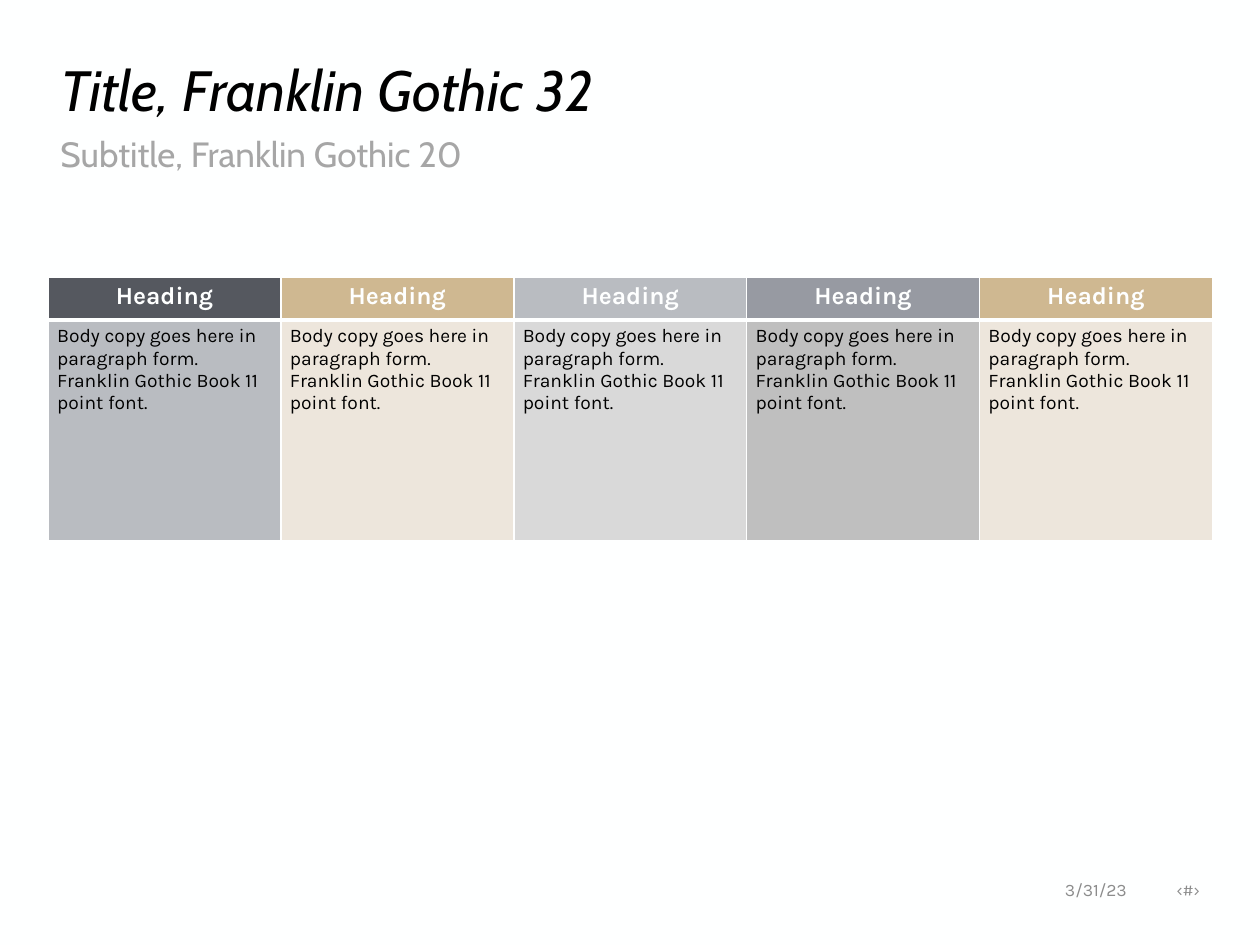
from lxml import etree
from pptx import Presentation
from pptx.dml.color import RGBColor
from pptx.enum.text import MSO_ANCHOR, PP_ALIGN
from pptx.oxml.ns import qn
from pptx.util import Cm, Pt

MID, TOP = MSO_ANCHOR.MIDDLE, MSO_ANCHOR.TOP
LEFT, CENTER = PP_ALIGN.LEFT, PP_ALIGN.CENTER
PAPER, BLACK = "FEFFFF", "000000"
BODY = "Body copy goes here in paragraph form. Franklin Gothic Book 11 point font."
HEADS = ["55585F", "CFB891", "B9BCC1", "979AA2", "CFB891"]
FILLS = ["B9BCC1", "EDE6DC", "D9D9D9", "BFBFBF", "EDE6DC"]


def paint(fmt, code):
    """Fill a format with a solid hex colour."""
    fmt.solid()
    fmt.fore_color.rgb = RGBColor.from_string(code)


def add_run(para, text, face, size, code, bold=False, slant=False):
    """Add one styled run to a paragraph."""
    run = para.add_run()
    run.text = text
    font = run.font
    font.name, font.size = face, Pt(size)
    font.bold, font.italic = bold, slant
    paint(font.fill, code)


def add_text(slide, box, anchor):
    """Add a wrapping text box and return its frame."""
    frame = slide.shapes.add_textbox(*map(Cm, box)).text_frame
    frame.word_wrap = True
    frame.vertical_anchor = anchor
    return frame


def add_edges(cell, widths):
    """Draw the left, right, top and bottom borders of a cell."""
    props = cell._tc.get_or_add_tcPr()
    for spot, (side, width) in enumerate(zip("LRTB", widths)):
        line = etree.Element(qn(f"a:ln{side}"), w=str(Pt(width)))
        fill = etree.SubElement(line, qn("a:solidFill"))
        etree.SubElement(fill, qn("a:srgbClr"), val=PAPER)
        props.insert(spot, line)


def set_cell(cell, text, size, code, back, align, widths, bold):
    """Fill, border and letter one table cell."""
    cell.margin_left = cell.margin_right = Cm(0.18)
    cell.margin_top = cell.margin_bottom = Cm(0.1)
    paint(cell.fill, back)
    add_edges(cell, widths)
    para = cell.text_frame.paragraphs[0]
    para.alignment = align
    add_run(para, text, "Karla", size, code, bold)


def add_head(slide, left, top, width):
    """Place the title and the subtitle below it."""
    rows = [
        (0, 1.63, MID, "Title, Franklin Gothic 32", 32.4, BLACK, True),
        (1.57, 1.02, TOP, "Subtitle, Franklin Gothic 20", 20, "A6A6A6", False),
    ]
    for drop, height, anchor, text, size, code, slant in rows:
        frame = add_text(slide, (left, top + drop, width, height), anchor)
        para = frame.paragraphs[0]
        para.line_spacing = 0.9
        add_run(para, text, "Cabin", size, code, slant=slant)


def add_grid(slide, left, top, width, height):
    """Place the table of headings over body copy."""
    box = map(Cm, (left, top, width, height))
    table = slide.shapes.add_table(2, len(HEADS), *box).table
    table.horz_banding = False
    table.rows[0].height = Cm(0.86)
    table.rows[1].height = Cm(height - 0.86)
    for col, (head, fill) in enumerate(zip(HEADS, FILLS)):
        table.columns[col].width = Cm(width / len(HEADS))
        set_cell(table.cell(0, col), "Heading", 14, PAPER, head, CENTER,
                 (1, 1, 1, 3), True)
        set_cell(table.cell(1, col), BODY, 11, BLACK, fill, LEFT,
                 (1, 1, 3, 1), False)


def add_foot(slide, left, top, width, height):
    """Place the date and the page mark, set apart by a right tab."""
    frame = add_text(slide, (left, top, width, height), MID)
    frame.margin_left = Cm(0.74)
    para = frame.paragraphs[0]
    stops = etree.SubElement(para._p.get_or_add_pPr(), qn("a:tabLst"))
    etree.SubElement(stops, qn("a:tab"), pos=str(Cm(2.72)), algn="r")
    add_run(para, "3/31/23\t‹#›", "Karla", 10, "8C8C8C")


def main():
    """Build and save the slide."""
    deck = Presentation()
    deck.slide_width, deck.slide_height = Cm(25.4), Cm(19.05)
    slide = deck.slides.add_slide(deck.slide_layouts[6])
    paint(slide.background.fill, PAPER)
    add_grid(slide, 0.97, 5.59, 23.47, 5.31)
    add_head(slide, 0.97, 1.07, 23.47)
    add_foot(slide, 20.73, 17.48, 3.73, 0.89)
    deck.save("out.pptx")


if __name__ == "__main__":
    main()
